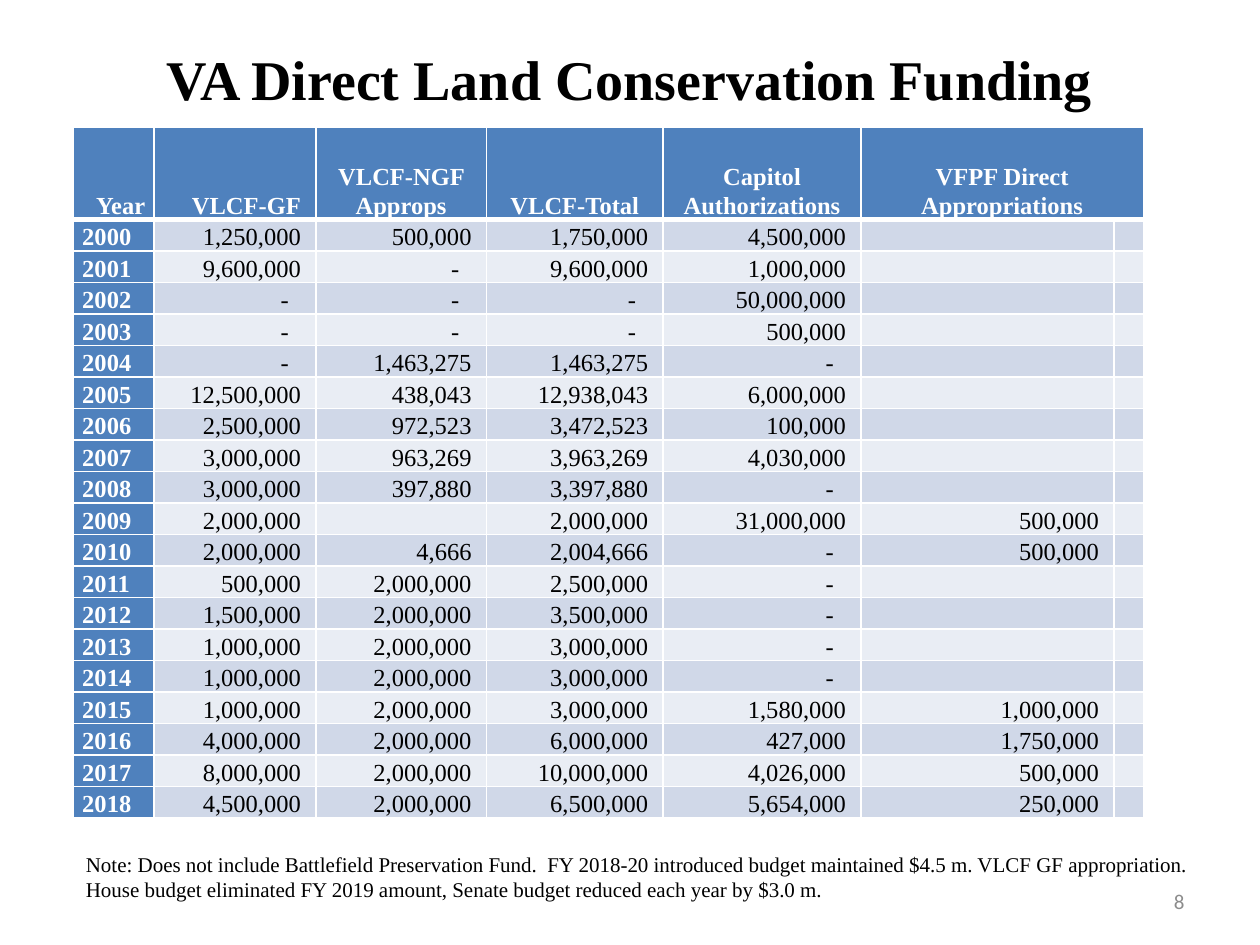
import dataclasses
from typing import Optional

import lxml.etree
import pptx
import pptx.dml.color
import pptx.enum.text
import pptx.oxml.ns
import pptx.util

Pt = pptx.util.Pt
ALIGN = pptx.enum.text.PP_ALIGN
ANCHOR = pptx.enum.text.MSO_ANCHOR
qn = pptx.oxml.ns.qn

COLORS = {
    "black": "000000",
    "white": "FFFFFF",
    "gray": "8C8C8C",
    "blue": "4F81BD",
    "band_dark": "D0D8E8",
    "band_light": "E9EDF4",
}
SERIF = "Times New Roman"
SIDE_MARGIN = 5
NUMBER_MARGIN = 8.5
DASH_MARGIN = 15.5
RULE = 1
HEADER_RULE = 3


@dataclasses.dataclass
class Style:
    size: float
    color: str = "black"
    bold: bool = False
    font: str = SERIF
    align: ALIGN = ALIGN.LEFT


@dataclasses.dataclass
class Header:
    text: str
    width: float
    align: ALIGN = ALIGN.CENTER
    right_margin: float = SIDE_MARGIN


@dataclasses.dataclass
class Funding:
    year: int
    gf: int
    ngf: Optional[int]
    capitol: int
    vfpf: Optional[int] = None

    def amounts(self) -> list[Optional[int]]:
        total = self.gf + (self.ngf or 0)
        return [self.gf, self.ngf, total, self.capitol, self.vfpf, None]


HEADERS = [
    Header("Year", 46, ALIGN.RIGHT),
    Header("VLCF-GF", 92.5, ALIGN.RIGHT, NUMBER_MARGIN),
    Header("VLCF-NGF Approps", 97.5),
    Header("VLCF-Total", 101),
    Header("Capitol Authorizations", 113),
    Header("VFPF Direct Appropriations", 144.5),
    Header("", 17),
]
FUNDING = [
    Funding(2000, 1250000, 500000, 4500000),
    Funding(2001, 9600000, 0, 1000000),
    Funding(2002, 0, 0, 50000000),
    Funding(2003, 0, 0, 500000),
    Funding(2004, 0, 1463275, 0),
    Funding(2005, 12500000, 438043, 6000000),
    Funding(2006, 2500000, 972523, 100000),
    Funding(2007, 3000000, 963269, 4030000),
    Funding(2008, 3000000, 397880, 0),
    Funding(2009, 2000000, None, 31000000, 500000),
    Funding(2010, 2000000, 4666, 0, 500000),
    Funding(2011, 500000, 2000000, 0),
    Funding(2012, 1500000, 2000000, 0),
    Funding(2013, 1000000, 2000000, 0),
    Funding(2014, 1000000, 2000000, 0),
    Funding(2015, 1000000, 2000000, 1580000, 1000000),
    Funding(2016, 4000000, 2000000, 427000, 1750000),
    Funding(2017, 8000000, 2000000, 4026000, 500000),
    Funding(2018, 4500000, 2000000, 5654000, 250000),
]
NOTE = [
    "Note: Does not include Battlefield Preservation Fund.  FY 2018-20 introduced "
    "budget maintained $4.5 m. VLCF GF appropriation.",
    "House budget eliminated FY 2019 amount, Senate budget reduced each year by $3.0 m.",
]


def rgb(name: str) -> pptx.dml.color.RGBColor:
    return pptx.dml.color.RGBColor.from_string(COLORS[name])


def write(tf, lines: list[str], style: Style) -> None:
    tf.text = "\n".join(lines)
    for p in tf.paragraphs:
        p.alignment = style.align
        p.font.name = style.font
        p.font.size = Pt(style.size)
        p.font.bold = style.bold
        p.font.color.rgb = rgb(style.color)


def place(sp, left: float, top: float, width: float, height: float) -> None:
    sp.left, sp.top, sp.width, sp.height = map(Pt, (left, top, width, height))


def draw_borders(cell, top: float, bottom: float) -> None:
    tc_pr = cell._tc.get_or_add_tcPr()
    widths = {"a:lnL": RULE, "a:lnR": RULE, "a:lnT": top, "a:lnB": bottom}
    for tag, width in widths.items():
        ln = lxml.etree.SubElement(tc_pr, qn(tag), w=str(int(Pt(width))))
        fill = lxml.etree.SubElement(ln, qn("a:solidFill"))
        lxml.etree.SubElement(fill, qn("a:srgbClr"), val=COLORS["white"])


def fill_cell(cell, text: str, style: Style, fill: str, right_margin: float = SIDE_MARGIN,
              top: float = RULE, bottom: float = RULE) -> None:
    cell.margin_left, cell.margin_right = Pt(SIDE_MARGIN), Pt(right_margin)
    cell.margin_top = cell.margin_bottom = 0
    cell.vertical_anchor = ANCHOR.BOTTOM
    draw_borders(cell, top, bottom)
    cell.fill.solid()
    cell.fill.fore_color.rgb = rgb(fill)
    write(cell.text_frame, [text], style)
    p = cell.text_frame.paragraphs[0]
    p.line_spacing = 1.07
    if not text:
        lxml.etree.SubElement(p._p, qn("a:endParaRPr"), sz=str(style.size * 100))


def draw_table(s) -> None:
    header_height, row_height = 52.5, 18
    width = sum(h.width for h in HEADERS)
    height = header_height + row_height * len(FUNDING)
    table = s.shapes.add_table(len(FUNDING) + 1, len(HEADERS), Pt(42), Pt(73),
                               Pt(width), Pt(height)).table
    for row in table.rows:
        row.height = Pt(row_height)
    table.rows[0].height = Pt(header_height)

    for col, header in enumerate(HEADERS):
        table.columns[col].width = Pt(header.width)
        style = Style(14, "white", True, align=header.align)
        fill_cell(table.cell(0, col), header.text, style, "blue",
                  header.right_margin, bottom=HEADER_RULE)
    table.cell(0, 5).merge(table.cell(0, 6))

    year_style = Style(14, "white", True)
    amount_style = Style(14, align=ALIGN.RIGHT)
    for row, funding in enumerate(FUNDING, 1):
        top = HEADER_RULE if row == 1 else RULE
        band = "band_dark" if row % 2 else "band_light"
        fill_cell(table.cell(row, 0), str(funding.year), year_style, "blue", top=top)
        for col, amount in enumerate(funding.amounts(), 1):
            text = "" if amount is None else f"{amount:,}" if amount else "-"
            margin = DASH_MARGIN if text == "-" else NUMBER_MARGIN if text else SIDE_MARGIN
            fill_cell(table.cell(row, col), text, amount_style, band, margin, top)


def main() -> None:
    prs = pptx.Presentation()
    prs.slide_width, prs.slide_height = Pt(720), Pt(540)
    s = prs.slides.add_slide(prs.slide_layouts[5])

    title = s.shapes.title
    place(title, 36, 21.6, 648, 90)
    title.text_frame.vertical_anchor = ANCHOR.TOP
    write(title.text_frame, ["VA Direct Land Conservation Funding"],
          Style(32, bold=True, align=ALIGN.CENTER))

    number = s.shapes.add_textbox(Pt(516), Pt(500.5), Pt(168), Pt(29))
    number.text_frame.word_wrap = True
    number.text_frame.vertical_anchor = ANCHOR.MIDDLE
    write(number.text_frame, ["8"], Style(12, "gray", font="Calibri", align=ALIGN.RIGHT))

    draw_table(s)

    note = s.shapes.add_textbox(Pt(42), Pt(483), Pt(664.5), Pt(36))
    note.text_frame.word_wrap = False
    note.text_frame.auto_size = pptx.enum.text.MSO_AUTO_SIZE.SHAPE_TO_FIT_TEXT
    write(note.text_frame, NOTE, Style(12))

    prs.save("out.pptx")


if __name__ == "__main__":
    main()
